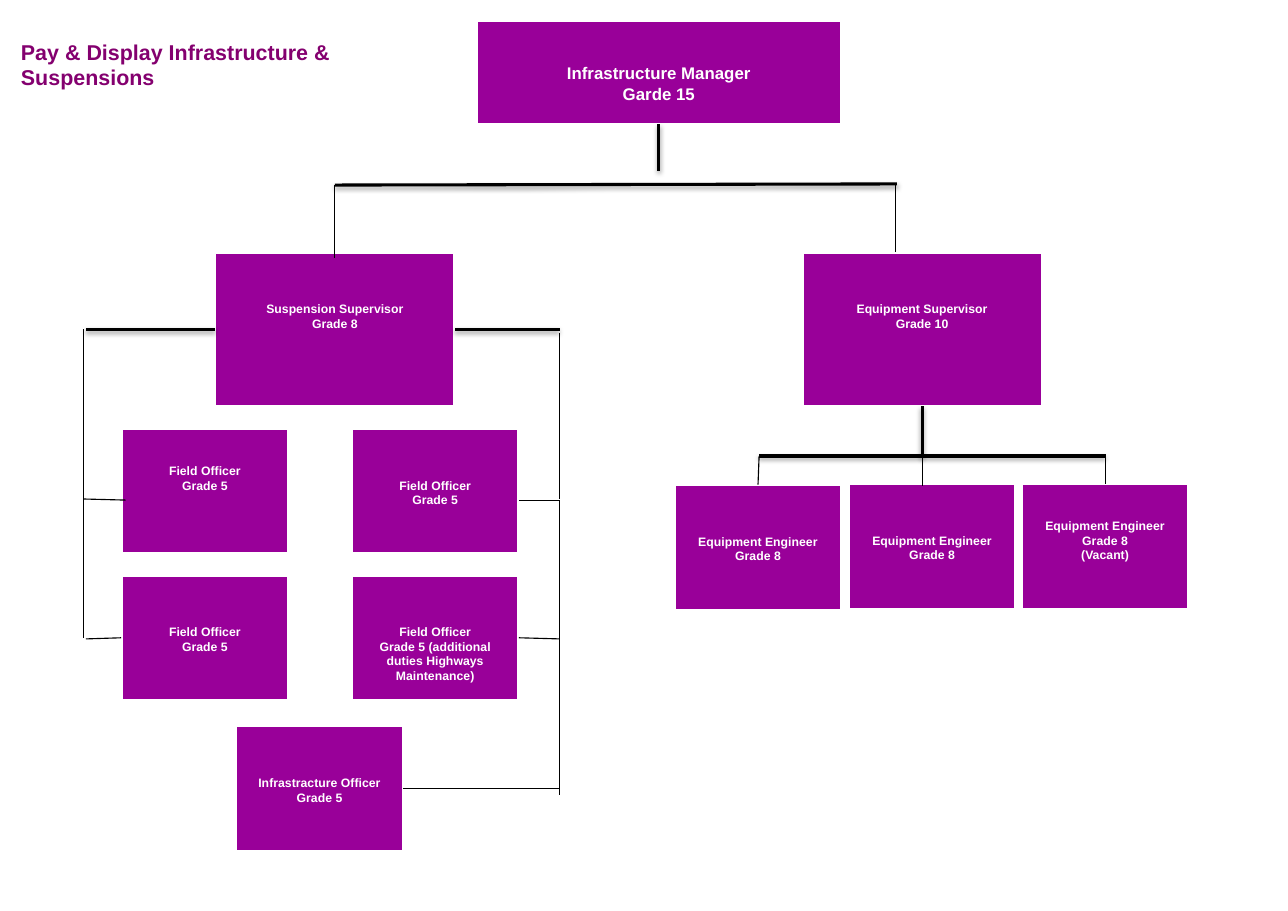
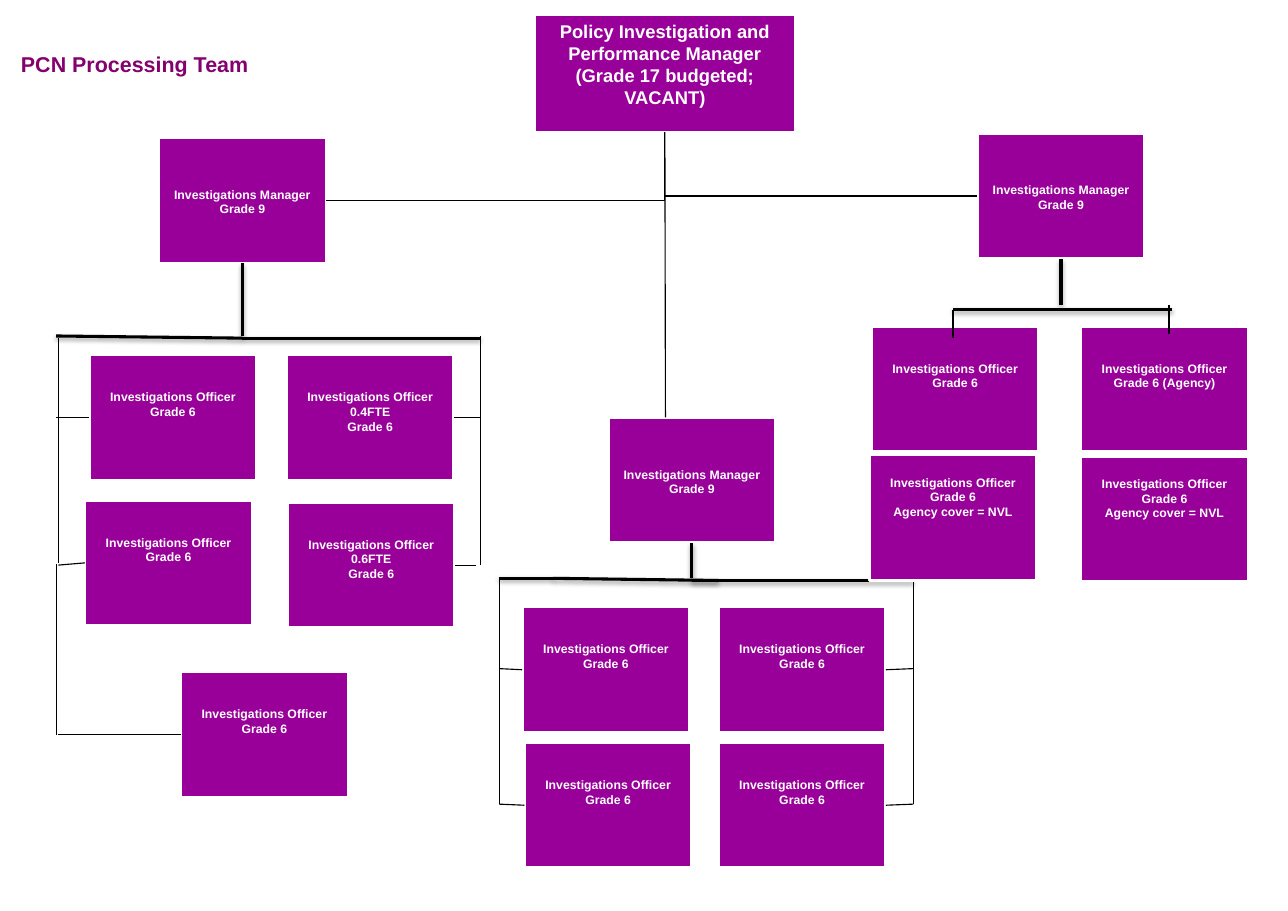
from dataclasses import dataclass
from itertools import product

from lxml import etree
from pptx import Presentation
from pptx import util as u
from pptx.dml.color import RGBColor
from pptx.enum import shapes, text
from pptx.oxml.ns import qn

# Shared look
PURPLE, PLUM, WHITE, BLACK = "990099", "84006F", "FFFFFF", "000000"
FONT = "Arial"
TITLE_LAYOUT = 5

# The grid has one-inch columns and rows
PITCH = u.Inches(1)
COLUMNS, ROWS = 11.69, 8.27
SMALL, LARGE = (1.52, 1.14), (2.18, 1.4)
TEXT_MARGIN, TEXT_LINE = 0.05, 0.133
JOIN_REACH = 0.02


@dataclass
class Post:
    """A post in the chart; drop is how many text lines the label starts down."""
    column: float
    row: float
    lines: tuple[str, ...]
    drop: float = 2
    size: tuple[float, float] = SMALL
    points: float = 8

    def sides(self) -> list[tuple[float, float]]:
        """Middles of the top, left, bottom and right sides."""
        width, height = self.size
        middle, centre = self.column + width / 2, self.row + height / 2
        return [(middle, self.row), (self.column, centre),
                (middle, self.row + height), (self.column + width, centre)]


@dataclass
class Link:
    """A line between two grid points; heavy lines carry a shadow."""
    start: tuple[float, float]
    end: tuple[float, float]
    heavy: bool = False
    bent: bool = False


def grid(length: float) -> int:
    return round(length * PITCH)


def colour(value: str) -> RGBColor:
    return RGBColor.from_string(value)


def style_font(font, points: float, value: str) -> None:
    font.name, font.size, font.bold = FONT, u.Pt(points), True
    font.color.rgb = colour(value)


def add_title(page, wording: str) -> None:
    title = page.shapes.title
    title.left, title.top, title.width, title.height = map(grid, (0.1, 0.13, 4.16, 0.91))
    frame = title.text_frame
    frame.text = wording
    frame.word_wrap, frame.auto_size = True, text.MSO_AUTO_SIZE.NONE
    frame.vertical_anchor = text.MSO_ANCHOR.MIDDLE
    frame.margin_left = frame.margin_right = u.Inches(0.09)
    para = frame.paragraphs[0]
    para.alignment = text.PP_ALIGN.LEFT
    style_font(para.font, 14, PLUM)


def add_post(page, post: Post):
    box = page.shapes.add_shape(shapes.MSO_SHAPE.RECTANGLE,
                                *map(grid, (post.column, post.row, *post.size)))
    box.shadow.inherit = False
    box.fill.solid()
    box.fill.fore_color.rgb = colour(PURPLE)
    box.line.color.rgb = colour(WHITE)
    box.line.width = u.Pt(2)
    frame = box.text_frame
    frame.word_wrap = True
    frame.vertical_anchor = text.MSO_ANCHOR.TOP
    frame.margin_top = grid(TEXT_MARGIN + post.drop * TEXT_LINE)
    for index, line in enumerate(post.lines):
        para = frame.add_paragraph() if index else frame.paragraphs[0]
        para.text = line
        para.alignment = text.PP_ALIGN.CENTER
        style_font(para.font, post.points, WHITE)
    return box


def find_side(point: tuple[float, float], placed: list):
    """The box and side number whose middle lies at the point, if any."""
    for post, box in placed:
        for number, side in enumerate(post.sides()):
            if all(abs(a - b) <= JOIN_REACH for a, b in zip(point, side)):
                return box, number
    return None


def add_link(page, link: Link, placed: list) -> None:
    kind = shapes.MSO_CONNECTOR.ELBOW if link.bent else shapes.MSO_CONNECTOR.STRAIGHT
    line = page.shapes.add_connector(kind, *map(grid, (*link.start, *link.end)))
    for point, connect in ((link.start, line.begin_connect), (link.end, line.end_connect)):
        joint = find_side(point, placed)
        if joint:
            connect(*joint)
    line.line.color.rgb = colour(BLACK)
    line.line.width = u.Pt(2 if link.heavy else 0.75)
    properties = line._element.spPr
    if link.bent:
        properties.find(qn("a:prstGeom")).set("prst", "bentConnector2")
    effects = etree.SubElement(properties, qn("a:effectLst"))
    if link.heavy:
        shadow = etree.SubElement(effects, qn("a:outerShdw"), blurRad=str(u.Pt(3.1)),
                                  dist=str(u.Pt(1.6)), dir="5400000", rotWithShape="0")
        black = etree.SubElement(shadow, qn("a:srgbClr"), val=BLACK)
        etree.SubElement(black, qn("a:alpha"), val="38000")


def add_page(deck, title: str, items: list) -> None:
    page = deck.slides.add_slide(deck.slide_layouts[TITLE_LAYOUT])
    add_title(page, title)
    placed = []
    for item in items:
        if isinstance(item, Post):
            placed.append((item, add_post(page, item)))
        else:
            add_link(page, item, placed)


def heavy(*points: tuple[float, float]) -> list[Link]:
    """Heavy lines through the points in turn."""
    return [Link(a, b, heavy=True) for a, b in zip(points, points[1:])]


def thin(*points: tuple[float, float]) -> list[Link]:
    """Thin lines through the points in turn."""
    return [Link(a, b) for a, b in zip(points, points[1:])]


def infrastructure_items() -> list:
    field, engineer = "Field Officer", "Equipment Engineer"
    return [
        # Manager and supervisors
        Post(4.32, 0.19, ("Infrastructure Manager", "Garde 15"), 2.5, (3.32, 0.94), 11),
        Post(1.95, 2.29, ("Suspension Supervisor", "Grade 8"), 3, LARGE),
        Post(7.28, 2.29, ("Equipment Supervisor", "Grade 10"), 3, LARGE),
        # Suspension team
        Post(1.1, 3.89, (field, "Grade 5")),
        Post(3.19, 3.89, (field, "Grade 5"), 3),
        Post(1.1, 5.22, (field, "Grade 5"), 3),
        Post(3.19, 5.22, (field, "Grade 5 (additional duties Highways Maintenance)"), 3),
        Post(2.14, 6.59, ("Infrastracture Officer", "Grade 5"), 3),
        # Equipment team
        Post(6.12, 4.4, (engineer, "Grade 8"), 3),
        Post(7.7, 4.39, (engineer, "Grade 8"), 3),
        Post(9.27, 4.39, (engineer, "Grade 8", "(Vacant)")),
        # Manager to supervisors
        *heavy((5.98, 1.14), (5.98, 1.55)),
        *heavy((3.04, 1.68), (8.14, 1.67)),
        *thin((3.04, 1.68), (3.04, 2.34)),
        *thin((8.13, 2.29), (8.13, 1.67)),
        # Suspension team, right side
        *heavy((4.13, 2.99), (5.08, 2.99)),
        *thin((5.08, 3.02), (5.08, 4.53)),
        *thin((4.71, 4.54), (5.08, 4.54), (5.08, 5.8), (5.08, 7.22)),
        *thin((4.71, 5.79), (5.08, 5.8)),
        *thin((3.67, 7.16), (5.08, 7.16)),
        # Suspension team, left side
        *heavy((1.95, 2.99), (0.78, 2.99)),
        *thin((0.76, 2.99), (0.76, 5.79)),
        *thin((1.1, 5.79), (0.78, 5.8)),
        *thin((1.14, 4.54), (0.76, 4.53)),
        # Equipment team
        *heavy((8.37, 3.69), (8.37, 4.14)),
        *heavy((6.89, 4.14), (8.37, 4.14), (10.03, 4.14)),
        *thin((10.03, 4.39), (10.03, 4.12)),
        *thin((6.89, 4.4), (6.89, 4.14)),
        *thin((8.37, 4.41), (8.37, 4.15)),
    ]


def processing_items() -> list:
    manager = ("Investigations Manager", "Grade 9")
    officer, grade = "Investigations Officer", "Grade 6"
    plain = (officer, grade)
    agency = (officer, grade, "Agency cover = NVL")
    return [
        # Managers
        Post(4.85, 0.13, ("Policy Investigation and Performance Manager "
                          "(Grade 17 budgeted; VACANT)",), 0, (2.37, 1.07), 12),
        *(Post(column, row, manager, 3)
          for column, row in ((1.44, 1.25), (5.52, 3.79), (8.87, 1.21))),
        # Officers
        *(Post(column, row, plain)
          for column, row in ((0.81, 3.22), (0.77, 4.54), (1.64, 6.1), (7.91, 2.96),
                              (4.74, 5.51), (6.52, 5.51), (4.76, 6.74), (6.52, 6.74))),
        Post(2.6, 3.22, (officer, "0.4FTE", grade)),
        Post(2.61, 4.56, (officer, "0.6FTE", grade)),
        Post(9.81, 2.96, (f"{officer} {grade} (Agency)",)),
        # Left team
        *heavy((2.2, 2.39), (2.2, 3.05)),
        *heavy((4.36, 3.07), (2.2, 3.07), (0.51, 3.05)),
        *thin((4.36, 3.05), (4.36, 5.13)),
        *thin((4.13, 3.79), (4.36, 3.79)),
        *thin((4.13, 5.13), (4.32, 5.13)),
        *thin((0.53, 3.07), (0.53, 5.11)),
        *thin((0.81, 3.79), (0.51, 3.79)),
        *thin((0.77, 5.11), (0.53, 5.13)),
        *thin((0.51, 5.12), (0.51, 6.67)),
        *thin((1.64, 6.67), (0.53, 6.67)),
        # Middle team
        *heavy((6.28, 4.92), (6.28, 5.25)),
        *heavy((6.28, 5.27), (8.29, 5.27)),
        *heavy((4.53, 5.25), (5.02, 5.25), (6.52, 5.27)),
        *(Link((column, 5.27), (column, 7.3)) for column in (4.53, 8.29)),
        *(Link((start, row), (end, row))
          for (start, end), row in product(((4.74, 4.53), (8.04, 8.29)), (6.07, 7.3))),
        # Right team
        *heavy((9.63, 2.34), (9.63, 2.77)),
        *heavy((8.65, 2.81), (10.64, 2.81)),
        *thin((8.65, 2.81), (8.65, 3.07)),
        *thin((10.61, 2.77), (10.61, 3.03)),
        Post(7.89, 4.13, agency, 1),
        Post(9.81, 4.14, agency, 1),
        # Policy manager to the three managers
        Link((2.96, 1.82), (6.04, 1.2), bent=True),
        Link((8.87, 1.78), (6.04, 1.2), bent=True),
        *thin((6.04, 1.2), (6.04, 3.79)),
    ]


def main() -> None:
    deck = Presentation()
    deck.slide_width, deck.slide_height = grid(COLUMNS), grid(ROWS)
    add_page(deck, "Pay & Display Infrastructure & Suspensions", infrastructure_items())
    add_page(deck, "PCN Processing Team", processing_items())
    deck.save("out.pptx")


if __name__ == "__main__":
    main()
